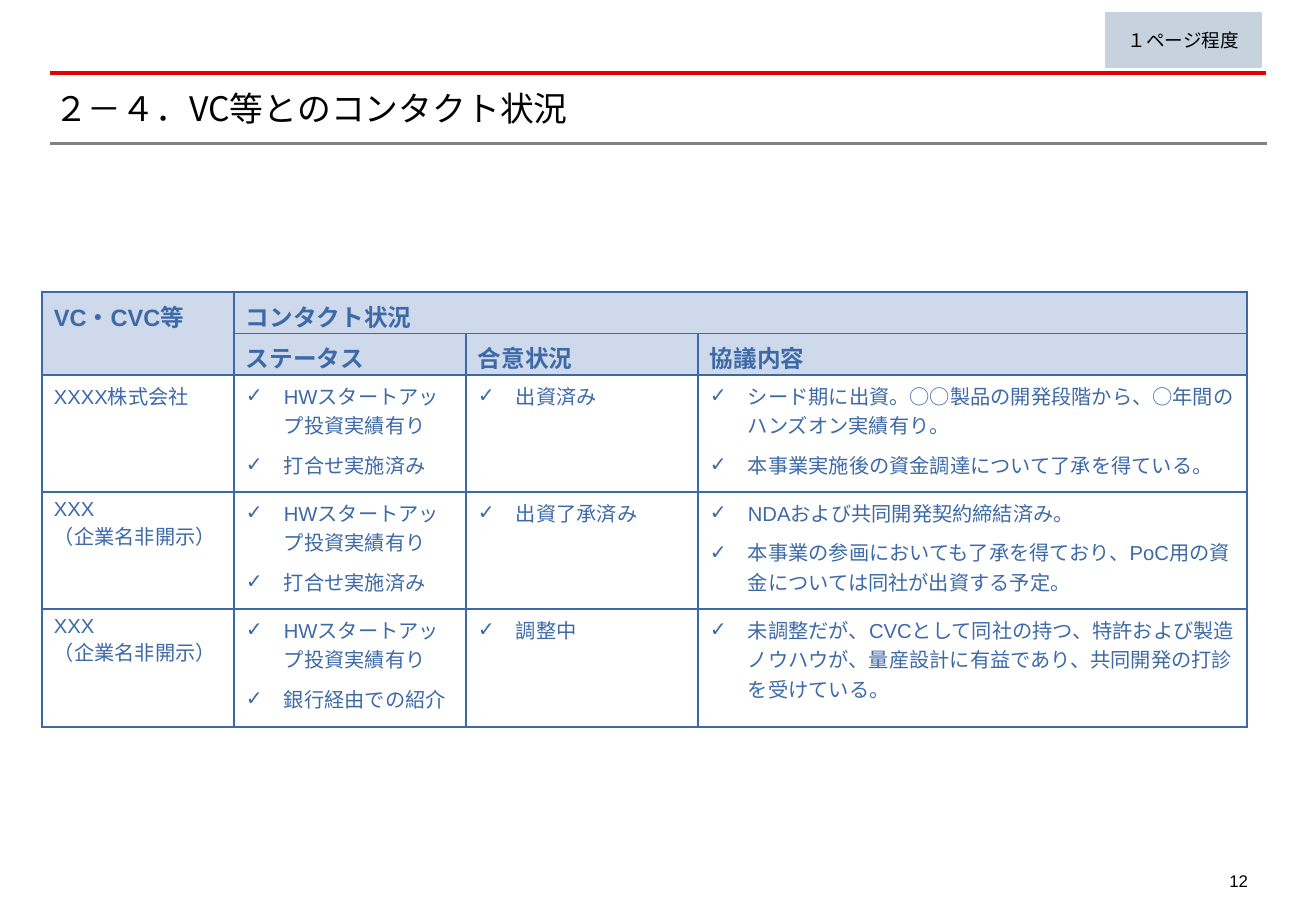
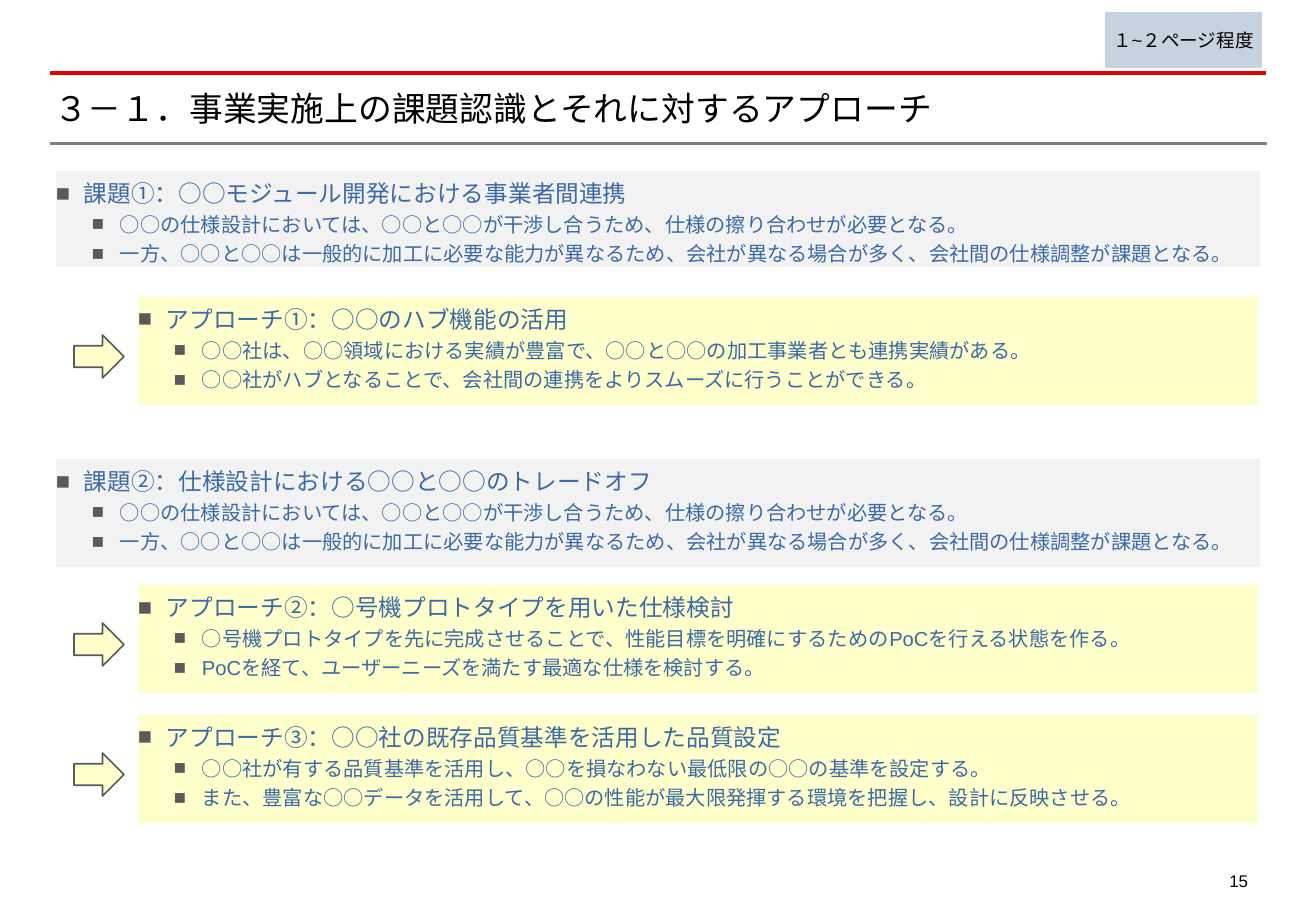
from lxml.etree import SubElement
from pptx import Presentation
from pptx.dml.color import RGBColor
from pptx.enum.shapes import MSO_CONNECTOR, MSO_SHAPE
from pptx.enum.text import MSO_ANCHOR, MSO_AUTO_SIZE, PP_ALIGN
from pptx.oxml.ns import qn
from pptx.util import Pt

# Shared look
SCALE = 914400 / 121.5
BLUE, GREY, BLACK, RED, RULE = "3D6AA7", "5A5A5A", "000000", "E60000", "808080"
BADGE, HEAD, PALE, CREAM = "C6D2DE", "CEDAEB", "F2F2F2", "FFFFCC"
SANS, CJK = "Arial", "Noto Sans CJK JP"
LEFT, MID, RIGHT = PP_ALIGN.LEFT, PP_ALIGN.CENTER, PP_ALIGN.RIGHT

# Contact table: a list in a cell is a check list
COLS = [192, 232, 232, 549]
ROWS = [41, 41, 117, 117, 118]
HEADS = [["VC・CVC等", "コンタクト状況", "", ""],
         ["", "ステータス", "合意状況", "協議内容"]]
FIRMS = [
    ["XXXX株式会社",
     ["HWスタートアップ投資実績有り", "打合せ実施済み"],
     ["出資済み"],
     ["シード期に出資。○○製品の開発段階から、○年間のハンズオン実績有り。",
      "本事業実施後の資金調達について了承を得ている。"]],
    ["XXX\n（企業名非開示）",
     ["HWスタートアップ投資実績有り", "打合せ実施済み"],
     ["出資了承済み"],
     ["NDAおよび共同開発契約締結済み。",
      "本事業の参画においても了承を得ており、PoC用の資金については同社が出資する予定。"]],
    ["XXX\n（企業名非開示）",
     ["HWスタートアップ投資実績有り", "銀行経由での紹介"],
     ["調整中"],
     ["未調整だが、CVCとして同社の持つ、特許および製造ノウハウが、"
      "量産設計に有益であり、共同開発の打診を受けている。"]],
]

# Issues and approaches: top, height, is approach, heading, points
NEEDS = ["○○の仕様設計においては、○○と○○が干渉し合うため、仕様の擦り合わせが必要となる。",
         "一方、○○と○○は一般的に加工に必要な能力が異なるため、会社が異なる場合が多く、"
         "会社間の仕様調整が課題となる。"]
BOXES = [
    (171, 96, False, "課題①：○○モジュール開発における事業者間連携", NEEDS),
    (297, 108, True, "アプローチ①：○○のハブ機能の活用",
     ["○○社は、○○領域における実績が豊富で、○○と○○の加工事業者とも連携実績がある。",
      "○○社がハブとなることで、会社間の連携をよりスムーズに行うことができる。"]),
    (459, 108, False, "課題②：仕様設計における○○と○○のトレードオフ", NEEDS),
    (585, 108, True, "アプローチ②：○号機プロトタイプを用いた仕様検討",
     ["○号機プロトタイプを先に完成させることで、性能目標を明確にするためのPoCを行える状態を作る。",
      "PoCを経て、ユーザーニーズを満たす最適な仕様を検討する。"]),
    (715, 108, True, "アプローチ③：○○社の既存品質基準を活用した品質設定",
     ["○○社が有する品質基準を活用し、○○を損なわない最低限の○○の基準を設定する。",
      "また、豊富な○○データを活用して、○○の性能が最大限発揮する環境を把握し、設計に反映させる。"]),
]


def px(n):
    return round(n * SCALE)


def rgb(code):
    return RGBColor.from_string(code)


def write(para, text, size=12, color=BLUE, font=SANS, bold=False, align=LEFT,
          level=0, space=1.0, after=0, mark=None, tint=GREY, margin=0, hang=0):
    """Fill one paragraph; mark is its bullet."""
    para.alignment, para.level, para.line_spacing = align, level, space
    para.space_before, para.space_after = Pt(0), Pt(after)
    for i, line in enumerate(text.split("\n")):
        if i:
            para.add_line_break()
        run = para.add_run()
        run.text = line
        run.font.size, run.font.bold, run.font.name = Pt(size), bold, font
        run.font.color.rgb = rgb(color)
        SubElement(run.font._element, qn("a:ea"), typeface=CJK)
    if mark:
        props = para._p.get_or_add_pPr()
        props.set("marL", str(px(margin)))
        props.set("indent", str(-px(hang)))
        SubElement(SubElement(props, qn("a:buClr")), qn("a:srgbClr"), val=tint)
        SubElement(props, qn("a:buFont"), typeface=SANS)
        SubElement(props, qn("a:buChar"), char=mark)


def setup(frame, wrap=True, anchor=MSO_ANCHOR.TOP, left=0, top=0):
    frame.word_wrap, frame.vertical_anchor = wrap, anchor
    frame.auto_size = MSO_AUTO_SIZE.NONE
    frame.margin_left = frame.margin_right = px(left)
    frame.margin_top, frame.margin_bottom = px(top), 0
    return frame


def next_para(frame, i):
    return frame.add_paragraph() if i else frame.paragraphs[0]


def block(slide, kind, box, fill, edge=None):
    shape = slide.shapes.add_shape(kind, *map(px, box))
    shape.shadow.inherit = False
    shape.fill.solid()
    shape.fill.fore_color.rgb = rgb(fill)
    if edge:
        shape.line.color.rgb = rgb(edge)
        shape.line.width = Pt(1)
    else:
        shape.line.fill.background()
    return shape


def rule(slide, y, end, color, width):
    line = slide.shapes.add_connector(MSO_CONNECTOR.STRAIGHT, px(50), px(y), px(end), px(y))
    line.line.color.rgb = rgb(color)
    line.line.width = Pt(width)
    SubElement(line._element.spPr, qn("a:effectLst"))


def new_slide(deck, title, note, page):
    """Title, two rules, badge and page number."""
    slide = deck.slides.add_slide(deck.slide_layouts[5])
    rule(slide, 73, 1266, RED, 2)
    rule(slide, 143.5, 1267, RULE, 1.25)
    head = slide.shapes.title
    head.left, head.top, head.width, head.height = map(px, (54, 87, 1204, 42))
    frame = setup(head.text_frame, anchor=MSO_ANCHOR.MIDDLE)
    write(frame.paragraphs[0], title, size=20, color=BLACK, font=CJK)
    badge = block(slide, MSO_SHAPE.RECTANGLE, (1106, 13, 155, 54), BADGE, BADGE)
    frame = setup(badge.text_frame, wrap=False, anchor=MSO_ANCHOR.MIDDLE)
    write(frame.paragraphs[0], note, size=11, color=BLACK, align=MID)
    foot = slide.shapes.add_textbox(*map(px, (1195, 864, 53, 34)))
    frame = setup(foot.text_frame, anchor=MSO_ANCHOR.MIDDLE)
    write(frame.paragraphs[0], page, size=10, color=BLACK, align=RIGHT)
    return slide


def border(cell):
    props = cell._tc.get_or_add_tcPr()
    for i, side in enumerate(("lnL", "lnR", "lnT", "lnB")):
        line = props.makeelement(qn("a:" + side), {"w": str(Pt(1))})
        fill = SubElement(line, qn("a:solidFill"))
        SubElement(fill, qn("a:srgbClr"), val=BLUE)
        props.insert(i, line)


def contact_table(slide):
    box = map(px, (42, 292, sum(COLS), sum(ROWS)))
    table = slide.shapes.add_table(len(ROWS), len(COLS), *box).table
    table.first_row = table.horz_banding = False
    for col, width in zip(table.columns, COLS):
        col.width = px(width)
    for row, height in zip(table.rows, ROWS):
        row.height = px(height)
    for r, row in enumerate(HEADS + FIRMS):
        top = r < len(HEADS)
        for c, item in enumerate(row):
            cell = table.cell(r, c)
            cell.margin_left = cell.margin_right = px(12)
            cell.margin_top, cell.margin_bottom = px(7 if top else 6), 0
            if top:
                cell.fill.solid()
                cell.fill.fore_color.rgb = rgb(HEAD)
            else:
                cell.fill.background()
            border(cell)
            if isinstance(item, list):
                for i, text in enumerate(item):
                    write(next_para(cell.text_frame, i), text, after=6, mark="✓",
                          tint=BLUE, margin=38, hang=38)
            elif item:
                write(cell.text_frame.paragraphs[0], item, size=14 if top else 12, bold=top)
    table.cell(0, 0).merge(table.cell(1, 0))
    table.cell(0, 1).merge(table.cell(0, 3))


def issue_box(slide, top, height, reply, head, points):
    x, width, fill = (138, 1120, CREAM) if reply else (56, 1204, PALE)
    shape = block(slide, MSO_SHAPE.RECTANGLE, (x, top, width, height), fill)
    frame = setup(shape.text_frame, top=2)
    write(frame.paragraphs[0], head, size=14, font=CJK, space=1.2,
          mark="■", margin=28, hang=28)
    for text in points:
        write(frame.add_paragraph(), text, level=1, space=1.2,
              mark="■", margin=64, hang=28)
    if reply:
        block(slide, MSO_SHAPE.RIGHT_ARROW, (74, top + 38, 50, 43), CREAM, GREY)


def main():
    deck = Presentation()
    deck.slide_width, deck.slide_height = px(1316), px(911)
    slide = new_slide(deck, "２－４．VC等とのコンタクト状況", "１ページ程度", "12")
    contact_table(slide)
    slide = new_slide(deck, "３－１．事業実施上の課題認識とそれに対するアプローチ",
                      "１~２ページ程度", "15")
    for box in BOXES:
        issue_box(slide, *box)
    deck.save("out.pptx")


if __name__ == "__main__":
    main()
